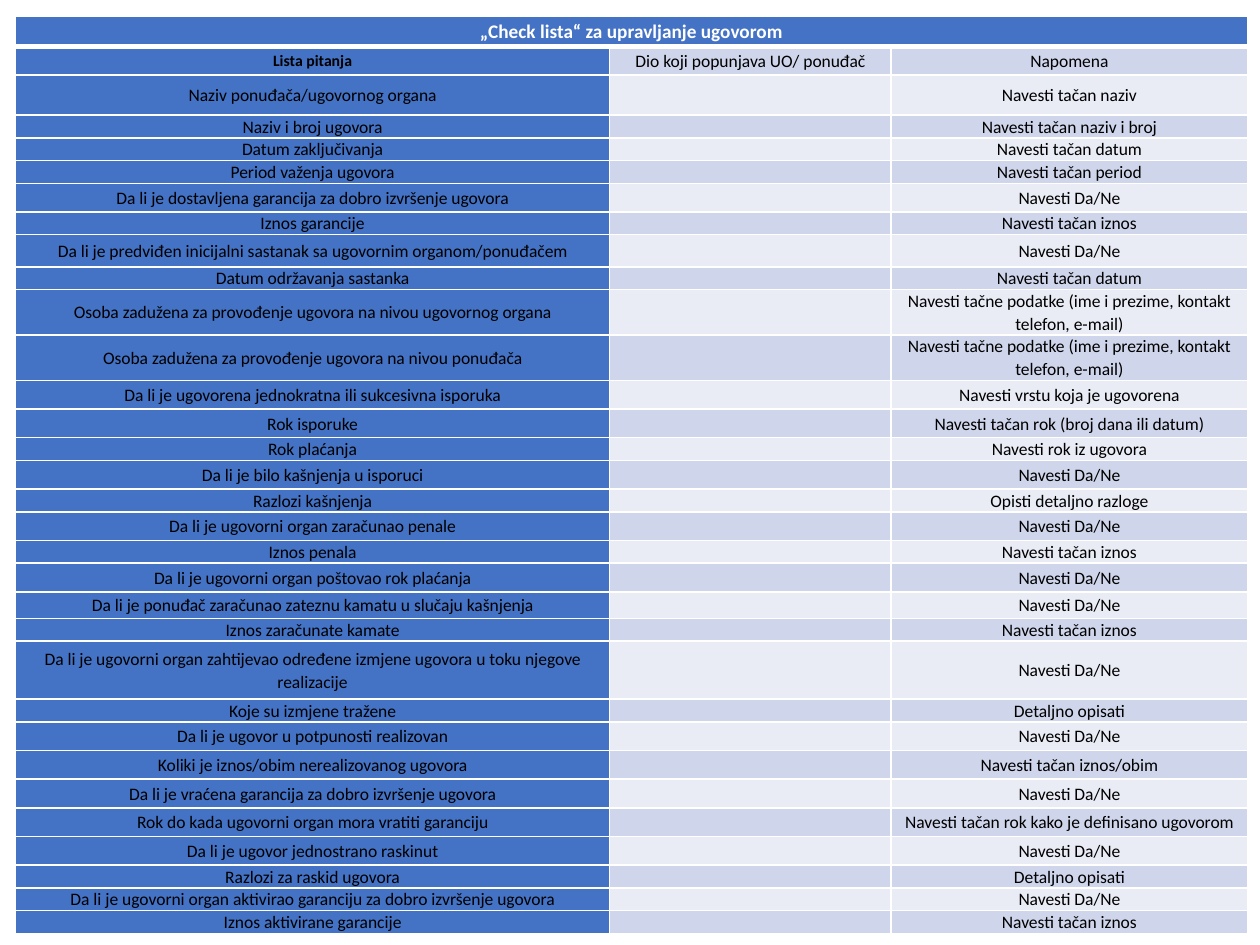
"""Builds the contract management check list slide."""
from lxml import etree
from pptx import Presentation
from pptx.dml.color import RGBColor
from pptx.enum.text import MSO_ANCHOR, PP_ALIGN
from pptx.oxml.ns import qn
from pptx.util import Pt

CENTER = PP_ALIGN.CENTER
MIDDLE = MSO_ANCHOR.MIDDLE
BLUE, WHITE, BLACK = "4472C4", "FFFFFF", "000000"
BANDS = ("E9EBF5", "CFD5EA")
LOW, MID = 12.8, 16.4
YES_NO = "Navesti Da/Ne"
CONTACT = "Navesti tačne podatke (ime i prezime, kontakt telefon, e-mail)"

TITLE = "„Check lista“ za upravljanje ugovorom"
HEADER = ("Lista pitanja", "Dio koji popunjava UO/ ponuđač", "Napomena")
COLUMNS = (339.6, 160.8, 203.8)
QUESTIONS = [
    (23, "Naziv ponuđača/ugovornog organa", "Navesti tačan naziv"),
    (LOW, "Naziv i broj ugovora", "Navesti tačan naziv i broj"),
    (LOW, "Datum zaključivanja", "Navesti tačan datum"),
    (LOW, "Period važenja ugovora", "Navesti tačan period"),
    (MID, "Da li je dostavljena garancija za dobro izvršenje ugovora", YES_NO),
    (LOW, "Iznos garancije", "Navesti tačan iznos"),
    (18.4, "Da li je predviđen inicijalni sastanak sa ugovornim organom/ponuđačem", YES_NO),
    (LOW, "Datum održavanja sastanka", "Navesti tačan datum"),
    (25.6, "Osoba zadužena za provođenje ugovora na nivou ugovornog organa", CONTACT),
    (25.6, "Osoba zadužena za provođenje ugovora na nivou ponuđača", CONTACT),
    (MID, "Da li je ugovorena jednokratna ili sukcesivna isporuka", "Navesti vrstu koja je ugovorena"),
    (MID, "Rok isporuke", "Navesti tačan rok (broj dana ili datum)"),
    (LOW, "Rok plaćanja", "Navesti rok iz ugovora"),
    (MID, "Da li je bilo kašnjenja u isporuci", YES_NO),
    (LOW, "Razlozi kašnjenja", "Opisti detaljno razloge"),
    (MID, "Da li je ugovorni organ zaračunao penale", YES_NO),
    (LOW, "Iznos penala", "Navesti tačan iznos"),
    (MID, "Da li je ugovorni organ poštovao rok plaćanja", YES_NO),
    (15.2, "Da li je ponuđač zaračunao zateznu kamatu u slučaju kašnjenja", YES_NO),
    (LOW, "Iznos zaračunate kamate", "Navesti tačan iznos"),
    (33.1, "Da li je ugovorni organ zahtijevao određene izmjene ugovora u toku njegove realizacije", YES_NO),
    (LOW, "Koje su izmjene tražene", "Detaljno opisati"),
    (MID, "Da li je ugovor u potpunosti realizovan", YES_NO),
    (MID, "Koliki je iznos/obim nerealizovanog ugovora", "Navesti tačan iznos/obim"),
    (MID, "Da li je vraćena garancija za dobro izvršenje ugovora", YES_NO),
    (MID, "Rok do kada ugovorni organ mora vratiti garanciju", "Navesti tačan rok kako je definisano ugovorom"),
    (MID, "Da li je ugovor jednostrano raskinut", YES_NO),
    (LOW, "Razlozi za raskid ugovora", "Detaljno opisati"),
    (LOW, "Da li je ugovorni organ aktivirao garanciju za dobro izvršenje ugovora", YES_NO),
    (LOW, "Iznos aktivirane garancije", "Navesti tačan iznos"),
]


def rgb(value):
    return RGBColor.from_string(value)


class Deck:
    def __init__(self, s, font="Calibri", size=10, spacing=1.07):
        self.s, self.font, self.size, self.spacing = s, font, size, spacing

    def table(self, left, top, columns, heights):
        shape = self.s.shapes.add_table(len(heights), len(columns), Pt(left), Pt(top),
                                        Pt(sum(columns)), Pt(sum(heights)))
        table = shape.table
        for column, width in zip(table.columns, columns):
            column.width = Pt(width)
        for row, height in zip(table.rows, heights):
            row.height = Pt(height)
        return table

    def borders(self, cell, top, bottom):
        tc_pr = cell._tc.get_or_add_tcPr()
        for side, width in (("L", 1), ("R", 1), ("T", top), ("B", bottom)):
            ln = etree.SubElement(tc_pr, qn(f"a:ln{side}"), w=str(Pt(width)))
            fill = etree.SubElement(ln, qn("a:solidFill"))
            etree.SubElement(fill, qn("a:srgbClr"), val=WHITE)

    def cell(self, cell, text, fill, size=None, color=BLACK, bold=False, top=1, bottom=1):
        size = size or self.size
        self.borders(cell, top, bottom)
        cell.fill.solid()
        cell.fill.fore_color.rgb = rgb(fill)
        cell.margin_left = cell.margin_right = Pt(2.2)
        cell.margin_top = cell.margin_bottom = 0
        cell.vertical_anchor = MIDDLE
        p = cell.text_frame.paragraphs[0]
        p.alignment = CENTER
        p.line_spacing = self.spacing
        if not text:
            etree.SubElement(p._p, qn("a:endParaRPr"), sz=str(size * 100))
            return
        r = p.add_run()
        r.text = text
        r.font.name = self.font
        r.font.size = Pt(size)
        r.font.bold = bold
        r.font.color.rgb = rgb(color)


def main():
    prs = Presentation()
    prs.slide_width, prs.slide_height = Pt(720), Pt(540)
    deck = Deck(prs.slides.add_slide(prs.slide_layouts[6]))
    heights = [17, MID] + [height for height, _, _ in QUESTIONS]
    table = deck.table(8.8, 9.4, COLUMNS, heights)
    table.cell(0, 0).merge(table.cell(0, 2))
    for col, text in enumerate((TITLE, "", "")):
        deck.cell(table.cell(0, col), text, BLUE, size=11, color=WHITE, bold=True, bottom=3)
    for col, text in enumerate(HEADER):
        first = col == 0
        deck.cell(table.cell(1, col), text, BLUE if first else BANDS[1],
                  size=9 if first else 10, bold=first, top=3)
    for row, (_, question, note) in enumerate(QUESTIONS, 2):
        band = BANDS[row % 2]
        for col, (text, fill) in enumerate(((question, BLUE), ("", band), (note, band))):
            deck.cell(table.cell(row, col), text, fill)
    prs.save("out.pptx")


if __name__ == "__main__":
    main()
